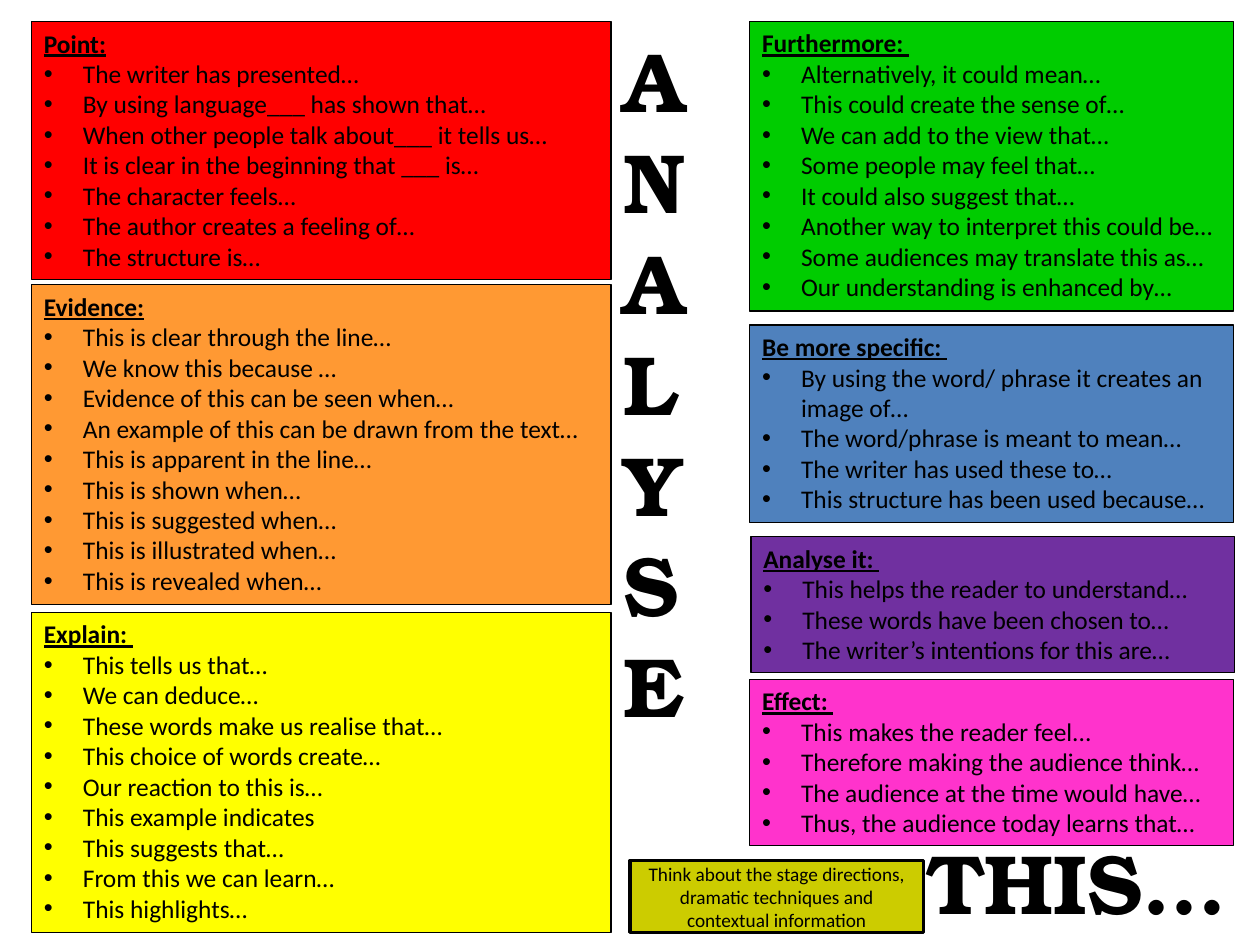
from dataclasses import dataclass

import pptx
import pptx.dml.color
import pptx.enum.shapes
import pptx.enum.text
import pptx.util
from lxml import etree
from pptx.oxml.ns import qn

EMU_PER_PX = 9144  # 100 px to the inch
COLORS = {
    "ink": "000000", "red": "FF0000", "orange": "FF9933", "yellow": "FFFF00",
    "green": "00CC00", "blue": "4F81BD", "purple": "7030A0", "pink": "FF33CC",
    "olive": "CCCC00",
}
BODY_FONT, DISPLAY_FONT = "Calibri", "TeX Gyre Bonum"
INDENT = 31
ALIGN = pptx.enum.text.PP_ALIGN
ANCHOR = pptx.enum.text.MSO_ANCHOR
AUTO = pptx.enum.text.MSO_AUTO_SIZE


@dataclass
class Panel:
    """A coloured box with a heading and bulleted sentence starters."""
    x: int
    y: int
    w: int
    h: int
    color: str
    heading: str
    starters: list[str]


@dataclass
class Word:
    """A large display word with its own text direction."""
    x: int
    y: int
    w: int
    h: int
    text: str
    direction: str
    rotation: int
    align: ALIGN


PANELS = [
    Panel(25, 17, 460, 205, "red", "Point:", [
        "The writer has presented…",
        "By using language___ has shown that…",
        "When other people talk about___ it tells us…",
        "It is clear in the beginning that ___ is…",
        "The character feels…",
        "The author creates a feeling of…",
        "The structure is…",
    ]),
    Panel(25, 226, 460, 254, "orange", "Evidence:", [
        "This is clear through the line…",
        "We know this because …",
        "Evidence of this can be seen when…",
        "An example of this can be drawn from the text…",
        "This is apparent in the line…",
        "This is shown when…",
        "This is suggested when…",
        "This is illustrated when…",
        "This is revealed when…",
    ]),
    Panel(25, 486, 460, 254, "yellow", "Explain: ", [
        "This tells us that…",
        "We can deduce…",
        "These words make us realise that…",
        "This choice of words create…",
        "Our reaction to this is…",
        "This example indicates",
        "This suggests that…",
        "From this we can learn…",
        "This highlights…",
    ]),
    Panel(595, 17, 384, 230, "green", "Furthermore: ", [
        "Alternatively, it could mean…",
        "This could create the sense of…",
        "We can add to the view that…",
        "Some people may feel that…",
        "It could also suggest that…",
        "Another way to interpret this could be…",
        "Some audiences may translate this as…",
        "Our understanding is enhanced by…",
    ]),
    Panel(595, 258, 384, 157, "blue", "Be more specific: ", [
        "By using the word/ phrase it creates an image of…",
        "The word/phrase is meant to mean…",
        "The writer has used these to…",
        "This structure has been used because…",
    ]),
    Panel(596, 426, 384, 108, "purple", "Analyse it: ", [
        "This helps the reader to understand…",
        "These words have been chosen to…",
        "The writer’s intentions for this are…",
    ]),
    Panel(595, 539, 384, 132, "pink", "Effect: ", [
        "This makes the reader feel...",
        "Therefore making the audience think…",
        "The audience at the time would have…",
        "Thus, the audience today learns that…",
    ]),
]
WORDS = [
    Word(485, 18, 110, 640, "ANALYSE", "wordArtVert", 0, ALIGN.LEFT),
    Word(762, 528, 101, 342, "THIS…", "vert", 270, ALIGN.RIGHT),
]


def px(n: int) -> int:
    return pptx.util.Emu(n * EMU_PER_PX)


def rgb(name: str) -> pptx.dml.color.RGBColor:
    return pptx.dml.color.RGBColor.from_string(COLORS[name])


def format_paragraph(p, size: float, font: str = BODY_FONT,
                     align: ALIGN = ALIGN.LEFT, bold: bool = False,
                     underline: bool = False) -> None:
    p.alignment = align
    for r in p.runs:
        r.font.size = pptx.util.Pt(size)
        r.font.name = font
        r.font.bold = bold
        r.font.underline = underline
        r.font.color.rgb = rgb("ink")


def add_bullet(p) -> None:
    pPr = p._p.get_or_add_pPr()
    pPr.set("marL", str(px(INDENT)))
    pPr.set("indent", str(-px(INDENT)))
    etree.SubElement(pPr, qn("a:buFont"), typeface="Arial")
    etree.SubElement(pPr, qn("a:buChar"), char="•")


def add_box(s, x: int, y: int, w: int, h: int, color: str, line: float):
    sp = s.shapes.add_shape(pptx.enum.shapes.MSO_SHAPE.RECTANGLE,
                            px(x), px(y), px(w), px(h))
    sp.shadow.inherit = False
    sp.fill.solid()
    sp.fill.fore_color.rgb = rgb(color)
    sp.line.color.rgb = rgb("ink")
    sp.line.width = pptx.util.Pt(line)
    sp.text_frame.word_wrap = True
    return sp


def add_panel(s, panel: Panel) -> None:
    sp = add_box(s, panel.x, panel.y, panel.w, panel.h, panel.color, 0.75)
    tf = sp.text_frame
    tf.vertical_anchor = ANCHOR.TOP
    tf.auto_size = AUTO.SHAPE_TO_FIT_TEXT
    tf.text = "\n".join([panel.heading, *panel.starters])
    heading, *starters = tf.paragraphs
    format_paragraph(heading, 14.5, bold=True, underline=True)
    for p in starters:
        format_paragraph(p, 14.5)
        add_bullet(p)


def add_word(s, word: Word) -> None:
    sp = s.shapes.add_textbox(px(word.x), px(word.y), px(word.w), px(word.h))
    sp.rotation = word.rotation
    tf = sp.text_frame
    tf.word_wrap = True
    tf.auto_size = AUTO.SHAPE_TO_FIT_TEXT
    tf.vertical_anchor = ANCHOR.MIDDLE
    tf._txBody.bodyPr.set("vert", word.direction)
    tf.text = word.text
    format_paragraph(tf.paragraphs[0], 48, DISPLAY_FONT, word.align, bold=True)


def add_reminder(s) -> None:
    tf = add_box(s, 500, 683, 233, 57, "olive", 2).text_frame
    tf.vertical_anchor = ANCHOR.MIDDLE
    tf.text = ("Think about the stage directions, dramatic techniques "
               "and contextual information")
    format_paragraph(tf.paragraphs[0], 11, align=ALIGN.CENTER)


def main() -> None:
    prs = pptx.Presentation()
    prs.slide_width, prs.slide_height = px(1000), px(750)
    s = prs.slides.add_slide(prs.slide_layouts[6])

    # Sentence starters in two columns
    for panel in PANELS:
        add_panel(s, panel)

    # Display words and the closing reminder
    for word in WORDS:
        add_word(s, word)
    add_reminder(s)

    prs.save("out.pptx")


if __name__ == "__main__":
    main()
